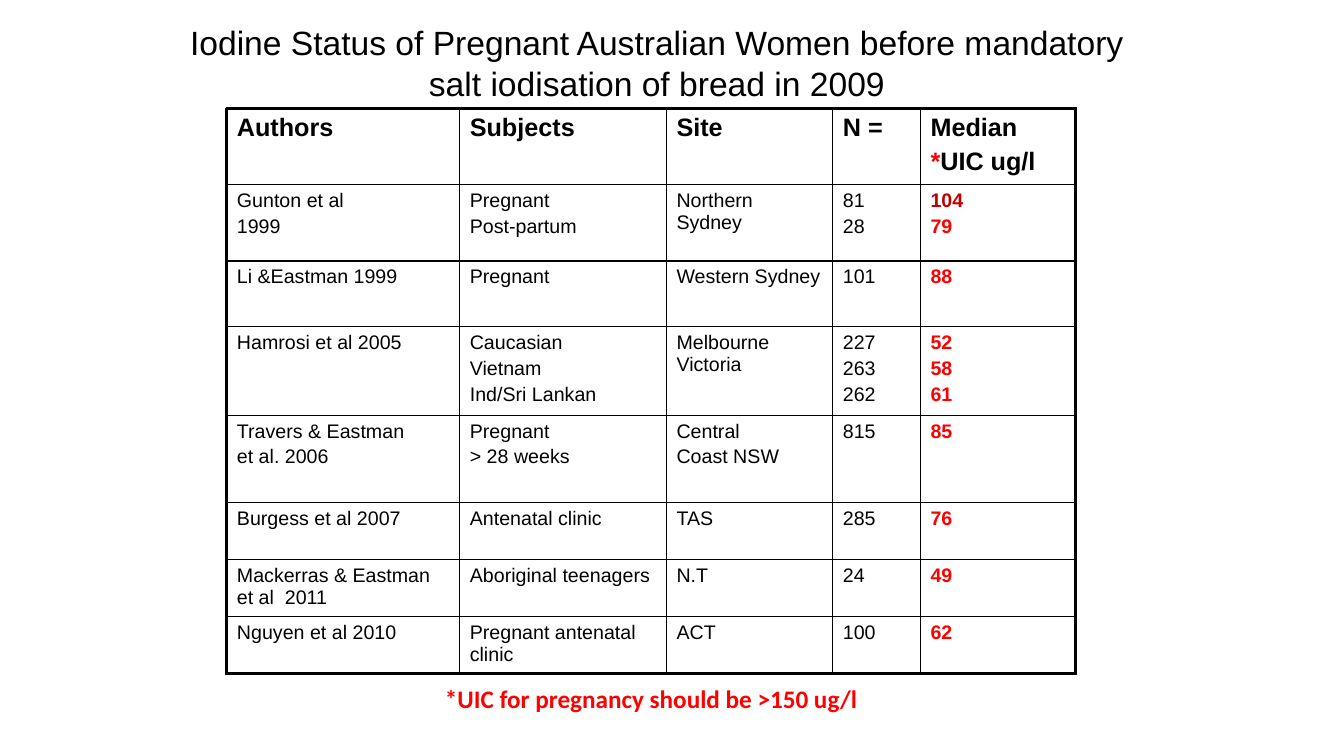
from dataclasses import dataclass

from lxml.etree import SubElement
from pptx import Presentation
from pptx.dml.color import RGBColor
from pptx.enum.text import MSO_ANCHOR as Anchor, MSO_AUTO_SIZE as AutoSize, PP_ALIGN as Align
from pptx.oxml.ns import qn
from pptx.util import Emu, Pt

PX = 9144  # EMU per px, 100 px to the inch


@dataclass(frozen=True)
class Theme:
    ink: str = "000000"
    red: str = "FF0000"
    dark_red: str = "C00000"
    font: str = "Arial"
    note_font: str = "Calibri"
    title_size: int = 24
    head_size: int = 18
    body_size: int = 14
    thin: float = 1
    thick: float = 2.25


@dataclass(frozen=True)
class Box:
    left: int
    top: int
    width: int
    height: int

    def emu(self) -> tuple[Emu, ...]:
        return tuple(Emu(v * PX) for v in (self.left, self.top, self.width, self.height))


@dataclass(frozen=True)
class Study:
    height: int
    authors: str
    subjects: str
    site: str
    count: str
    median: str


THEME = Theme()
TITLE_BOX = Box(161, 17, 981, 91)
TABLE_BOX = Box(225, 108, 842, 565)
NOTE_BOX = Box(291, 673, 710, 40)
COLUMN_WIDTHS = (231, 205, 165, 87, 154)

# Line breaks separate paragraphs within a cell
ROWS = (
    Study(74, "Authors", "Subjects", "Site", "N =", "Median\n*UIC ug/l"),
    Study(76, "Gunton et al\n1999", "Pregnant\nPost-partum", "Northern Sydney", "81\n28", "104\n79"),
    Study(65, "Li &Eastman 1999", "Pregnant", "Western Sydney", "101", "88"),
    Study(87, "Hamrosi et al 2005", "Caucasian\nVietnam\nInd/Sri Lankan",
          "Melbourne Victoria", "227\n263\n262", "52\n58\n61"),
    Study(87, "Travers & Eastman\net al. 2006", "Pregnant\n> 28 weeks",
          "Central\nCoast NSW", "815", "85"),
    Study(56, "Burgess et al 2007", "Antenatal clinic", "TAS", "285", "76"),
    Study(55, "Mackerras & Eastman et al  2011", "Aboriginal teenagers", "N.T", "24", "49"),
    Study(55, "Nguyen et al 2010", "Pregnant antenatal clinic", "ACT", "100", "62"),
)


def write(frame, text: str, *, size: int, color: str = THEME.ink, font: str = THEME.font,
          bold: bool = False, align=Align.LEFT, marks: dict[str, str] | None = None) -> None:
    """Fill a text frame; marks gives special colours to given words."""
    marks = marks or {}
    for index, line in enumerate(text.split("\n")):
        para = frame.add_paragraph() if index else frame.paragraphs[0]
        para.alignment = align
        para.space_before = Pt(size * 0.2 if index else 0)
        star = line.startswith("*") and "*" in marks
        for part in ("*", line[1:]) if star else (line,):
            span = para.add_run()
            span.text = part
            span.font.name, span.font.size, span.font.bold = font, Pt(size), bold
            span.font.color.rgb = RGBColor.from_string(marks.get(part, color))


def set_borders(cell, widths: dict[str, float]) -> None:
    properties = cell._tc.get_or_add_tcPr()
    for position, side in enumerate("LRTB"):
        line = SubElement(properties, qn(f"a:ln{side}"), w=str(Pt(widths[side])))
        fill = SubElement(line, qn("a:solidFill"))
        SubElement(fill, qn("a:srgbClr"), val=THEME.ink)
        properties.insert(position, line)


def draw_title(page, text: str) -> None:
    title = page.shapes.title
    title.left, title.top, title.width, title.height = TITLE_BOX.emu()
    frame = title.text_frame
    frame.word_wrap, frame.auto_size = True, AutoSize.SHAPE_TO_FIT_TEXT
    frame.vertical_anchor = Anchor.TOP
    write(frame, text, size=THEME.title_size, align=Align.CENTER)


def draw_table(page) -> None:
    table = page.shapes.add_table(len(ROWS), len(COLUMN_WIDTHS), *TABLE_BOX.emu()).table
    table.first_row = table.horz_banding = False
    for column, width in zip(table.columns, COLUMN_WIDTHS):
        column.width = Emu(width * PX)
    last_row, last_column = len(ROWS) - 1, len(COLUMN_WIDTHS) - 1
    for r, study in enumerate(ROWS):
        table.rows[r].height = Emu(study.height * PX)
        texts = (study.authors, study.subjects, study.site, study.count, study.median)
        for c, text in enumerate(texts):
            cell = table.cell(r, c)
            cell.fill.background()
            outer = {"L": c == 0, "R": c == last_column, "T": r == 0, "B": r == last_row}
            set_borders(cell, {side: THEME.thick if edge else THEME.thin
                               for side, edge in outer.items()})
            head, median = r == 0, c == last_column
            write(cell.text_frame, text,
                  size=THEME.head_size if head else THEME.body_size,
                  color=THEME.red if median and not head else THEME.ink,
                  bold=head or median,
                  marks={"*": THEME.red, "104": THEME.dark_red} if median else None)


def draw_note(page, text: str) -> None:
    frame = page.shapes.add_textbox(*NOTE_BOX.emu()).text_frame
    frame.word_wrap, frame.auto_size = True, AutoSize.SHAPE_TO_FIT_TEXT
    write(frame, text, size=THEME.head_size, color=THEME.red, font=THEME.note_font,
          bold=True, align=Align.CENTER)


def main() -> None:
    deck = Presentation()
    deck.slide_width, deck.slide_height = Emu(1333 * PX), Emu(750 * PX)
    page = deck.slides.add_slide(deck.slide_layouts[5])
    draw_title(page, "Iodine Status of Pregnant Australian Women before mandatory "
                     "salt iodisation of bread in 2009")
    draw_table(page)
    draw_note(page, "*UIC for pregnancy should be >150 ug/l")
    deck.save("out.pptx")


if __name__ == "__main__":
    main()
